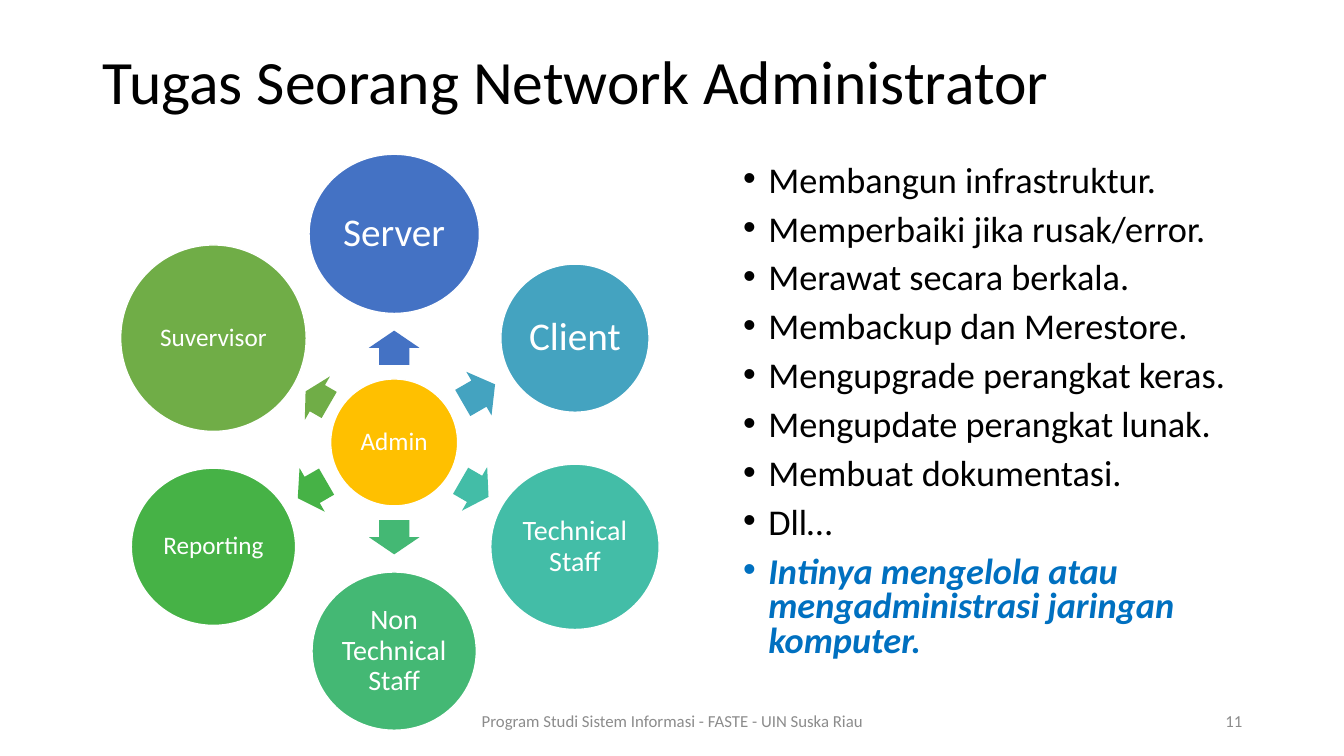
from math import cos, radians, sin

from pptx import Presentation
from pptx.dml.color import RGBColor
from pptx.enum.shapes import MSO_SHAPE
from pptx.enum.text import MSO_ANCHOR, MSO_AUTO_SIZE, PP_ALIGN
from pptx.util import Inches, Pt

COLORS = {
    "black": "000000", "white": "FFFFFF", "grey": "8C8C8C", "accent": "0070C0",
    "amber": "FFC000", "blue": "4472C4", "cyan": "44A3C0", "teal": "43BDA7",
    "jade": "44B874", "green": "46B246", "olive": "70AD47",
}
HUB_X, HUB_Y, ORBIT = 3.91, 4.39, 2.07
ARROW_HEIGHT = 0.5

# Label, angle, colour, size, text size, arrow length, arrow distance
PARTNERS = [
    ("Server", 270, "blue", (1.69, 1.58), 28, 0.34, 0.94),
    ("Client", 330, "cyan", (1.47, 1.47), 28, 0.37, 0.97),
    ("Technical Staff", 30, "teal", (1.67, 1.64), 20, 0.32, 0.92),
    ("Non Technical Staff", 90, "jade", (1.63, 1.57), 20, 0.34, 0.94),
    ("Reporting", 150, "green", (1.63, 1.56), 18, 0.33, 0.94),
    ("Suvervisor", 210, "olive", (1.84, 1.85), 18, 0.27, 0.88),
]
TASKS = [
    "Membangun infrastruktur.",
    "Memperbaiki jika rusak/error.",
    "Merawat secara berkala.",
    "Membackup dan Merestore.",
    "Mengupgrade perangkat keras.",
    "Mengupdate perangkat lunak.",
    "Membuat dokumentasi.",
    "Dll…",
]
SUMMARY = "Intinya mengelola atau mengadministrasi jaringan komputer."


def apply(target, values):
    """Set every attribute named in a dict of format values."""
    for name, value in values.items():
        setattr(target, name, value)


def place(shape, left, top, width, height):
    """Move and size a shape, in inches."""
    apply(shape, {"left": Inches(left), "top": Inches(top),
                  "width": Inches(width), "height": Inches(height)})


def write(para, text, size, color, layout, **style):
    """Write one formatted run into a paragraph."""
    apply(para, layout)
    span = para.add_run()
    span.text = text
    apply(span.font, {"name": "Calibri", "size": Pt(size), **style})
    span.font.color.rgb = RGBColor.from_string(COLORS[color])


def add_title(page, text):
    """Fill the title placeholder."""
    title = page.shapes.title
    place(title, 0.92, 0.4, 11.5, 0.87)
    apply(title.text_frame, {"vertical_anchor": MSO_ANCHOR.MIDDLE,
                             "word_wrap": True, "auto_size": MSO_AUTO_SIZE.NONE})
    write(title.text_frame.paragraphs[0], text, 44, "black",
          {"alignment": PP_ALIGN.LEFT, "line_spacing": 0.9})


def add_tasks(page):
    """Fill the body placeholder with the tasks and the closing summary."""
    body = page.placeholders[1]
    place(body, 7.27, 1.59, 5.64, 5.36)
    frame = body.text_frame
    apply(frame, {"word_wrap": True, "auto_size": MSO_AUTO_SIZE.NONE})
    layout = {"line_spacing": 0.8, "space_before": Pt(10)}
    for index, task in enumerate(TASKS + [SUMMARY]):
        para = frame.add_paragraph() if index else frame.paragraphs[0]
        properties = para._p.get_or_add_pPr()
        properties.set("marL", str(Inches(0.25)))
        properties.set("indent", str(Inches(-0.25)))
        if task == SUMMARY:
            write(para, task, 25.9, "accent", layout, bold=True, italic=True)
        else:
            write(para, task, 25.9, "black", layout)


def add_footer(page, text, left, width, alignment):
    """Add one small grey text at the foot of the page."""
    box = page.shapes.add_textbox(Inches(left), Inches(6.95), Inches(width), Inches(0.4))
    apply(box.text_frame, {"word_wrap": True, "vertical_anchor": MSO_ANCHOR.MIDDLE})
    write(box.text_frame.paragraphs[0], text, 12, "grey", {"alignment": alignment})


def add_centred(page, kind, angle, distance, width, height, color):
    """Add a filled shape centred at an angle and distance from the hub."""
    left = HUB_X + distance * cos(radians(angle)) - width / 2
    top = HUB_Y + distance * sin(radians(angle)) - height / 2
    shape = page.shapes.add_shape(kind, Inches(left), Inches(top),
                                  Inches(width), Inches(height))
    shape.shadow.inherit = False
    shape.fill.solid()
    shape.fill.fore_color.rgb = RGBColor.from_string(COLORS[color])
    return shape


def add_circle(page, label, angle, distance, size, color, text_size):
    """Add a labelled circle with a thin white outline."""
    circle = add_centred(page, MSO_SHAPE.OVAL, angle, distance, *size, color)
    circle.line.color.rgb = RGBColor.from_string(COLORS["white"])
    circle.line.width = Pt(1)
    frame = circle.text_frame
    sides = ("left", "top", "right", "bottom")
    apply(frame, {f"margin_{side}": Inches(0.03) for side in sides})
    apply(frame, {"word_wrap": True, "vertical_anchor": MSO_ANCHOR.MIDDLE})
    write(frame.paragraphs[0], label, text_size, "white",
          {"alignment": PP_ALIGN.CENTER, "line_spacing": 0.9})


def add_arrow(page, angle, distance, length, color):
    """Add a block arrow that points away from the hub."""
    arrow = add_centred(page, MSO_SHAPE.RIGHT_ARROW, angle, distance,
                        length, ARROW_HEIGHT, color)
    arrow.line.fill.background()
    arrow.rotation = angle
    arrow.adjustments[0] = 0.6
    arrow.adjustments[1] = 0.5


def main():
    """Build the slide and save it."""
    deck = Presentation()
    apply(deck, {"slide_width": Inches(13.33), "slide_height": Inches(7.5)})
    page = deck.slides.add_slide(deck.slide_layouts[1])
    add_title(page, "Tugas Seorang Network Administrator")
    add_tasks(page)
    add_footer(page, "Program Studi Sistem Informasi - FASTE - UIN Suska Riau",
               4.42, 4.5, PP_ALIGN.CENTER)
    add_footer(page, "11", 9.42, 3, PP_ALIGN.RIGHT)
    add_circle(page, "Admin", 0, 0, (1.26, 1.26), "amber", 18)
    for label, angle, color, size, text_size, length, distance in PARTNERS:
        add_arrow(page, angle, distance, length, color)
        add_circle(page, label, angle, ORBIT, size, color, text_size)
    deck.save("out.pptx")


if __name__ == "__main__":
    main()
